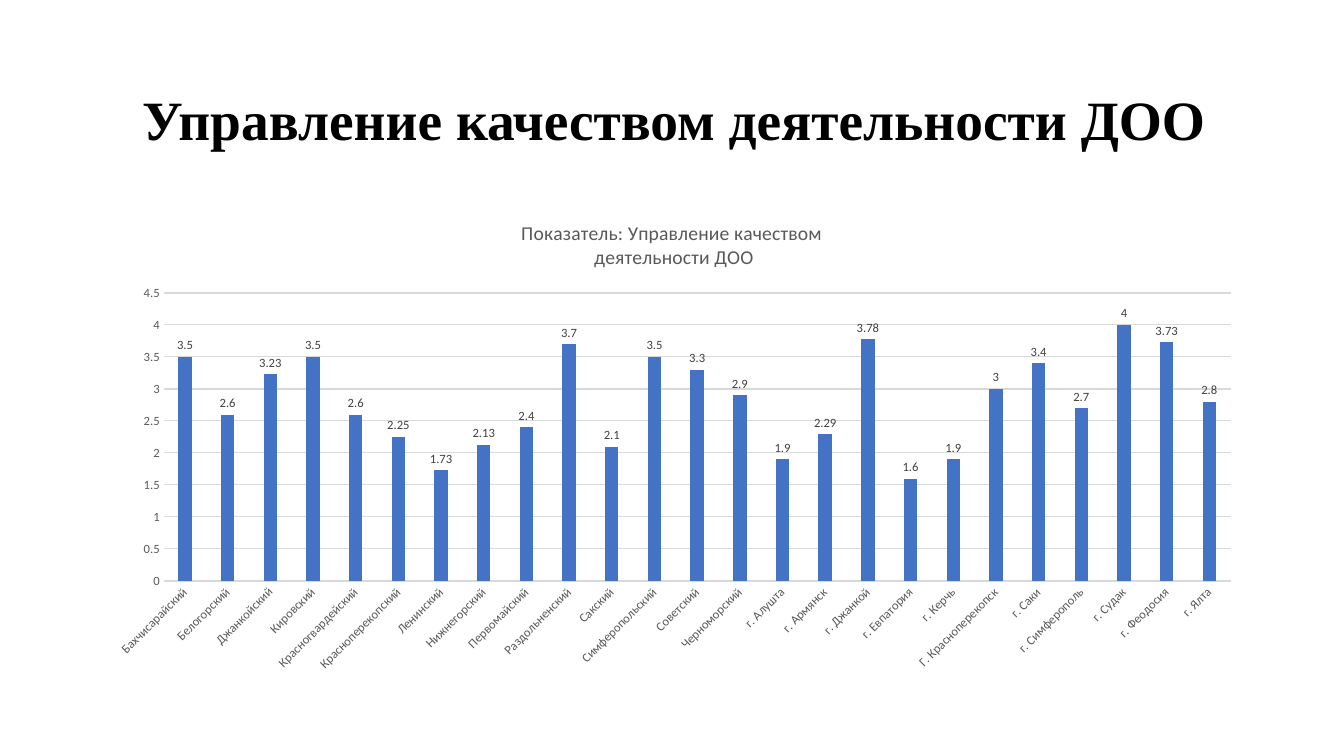
from lxml.etree import SubElement
from pptx import Presentation
from pptx.chart.data import CategoryChartData
from pptx.dml.color import RGBColor
from pptx.enum.chart import XL_CHART_TYPE as ChartType, XL_LABEL_POSITION as LabelPos, XL_TICK_MARK as Tick
from pptx.enum.text import MSO_ANCHOR as Anchor, PP_ALIGN as Align
from pptx.oxml.ns import qn
from pptx.util import Inches, Pt

SLIDE_W, SLIDE_H = Inches(13.33), Inches(7.5)
COLORS = {"heading": "000000", "muted": "595959", "value": "404040",
          "grid": "D9D9D9", "bar": "4472C4"}
HEADING = "Управление качеством деятельности ДОО"
CHART_TITLE = ["Показатель: Управление качеством ", "деятельности ДОО"]
SCORES = {
    "Бахчисарайский": 3.5, "Белогорский": 2.6, "Джанкойский": 3.23,
    "Кировский": 3.5, "Красногвардейский": 2.6, "Красноперекопский": 2.25,
    "Ленинский": 1.73, "Нижнегорский": 2.13, "Первомайский": 2.4,
    "Раздольненский": 3.7, "Сакский": 2.1, "Симферопольский": 3.5,
    "Советский": 3.3, "Черноморский": 2.9, "г. Алушта": 1.9,
    "г. Армянск": 2.29, "г. Джанкой": 3.78, "г. Евпатория": 1.6,
    "г. Керчь": 1.9, "Г. Красноперекопск": 3, "г. Саки": 3.4,
    "г. Симферополь": 2.7, "г. Судак": 4, "г. Феодосия": 3.73, "г. Ялта": 2.8,
}


def color(name):
    """Return the palette colour with this name."""
    return RGBColor.from_string(COLORS[name])


def area(left, top, width, height):
    """Turn shares of the slide into a position and a size."""
    return (int(left * SLIDE_W), int(top * SLIDE_H),
            int(width * SLIDE_W), int(height * SLIDE_H))


def style_font(font, size, tint, face="Calibri", bold=False):
    """Set the size, colour, face and weight of a font."""
    font.size, font.name, font.bold = Pt(size), face, bold
    font.color.rgb = color(tint)


def write(frame, lines, spacing=None, **style):
    """Fill a text frame with centred lines in one style."""
    for number, line in enumerate(lines):
        paragraph = frame.add_paragraph() if number else frame.paragraphs[0]
        paragraph.alignment = Align.CENTER
        if spacing:
            paragraph.line_spacing = spacing
        run = paragraph.add_run()
        run.text = line
        style_font(run.font, **style)


def style_line(line):
    """Draw a thin line in the grid colour."""
    line.color.rgb = color("grid")
    line.width = Pt(0.75)


def style_axis(axis):
    """Remove the tick marks of an axis and set its label font."""
    axis.major_tick_mark = axis.minor_tick_mark = Tick.NONE
    style_font(axis.tick_labels.font, 9, "muted")


def place_plot(chart, **shares):
    """Fix the inner plot area as shares of the chart."""
    plot_area = chart._chartSpace.chart.plotArea
    for old in plot_area.findall(qn("c:layout")):
        plot_area.remove(old)
    layout = SubElement(plot_area, qn("c:layout"))
    plot_area.insert(0, layout)
    manual = SubElement(layout, qn("c:manualLayout"))
    settings = {"layoutTarget": "inner", "xMode": "edge", "yMode": "edge", **shares}
    for tag, value in settings.items():
        SubElement(manual, qn(f"c:{tag}")).set("val", str(value))


def add_heading(slide):
    """Add the slide heading."""
    frame = slide.shapes.add_textbox(*area(0.07, 0.053, 0.863, 0.193)).text_frame
    frame.word_wrap = True
    frame.vertical_anchor = Anchor.MIDDLE
    write(frame, [HEADING], spacing=1.15, size=39.6, tint="heading",
          face="Times New Roman", bold=True)


def add_score_chart(slide):
    """Add the column chart of scores by district and town."""
    scores = CategoryChartData()
    scores.categories = list(SCORES)
    scores.add_series("Series 1", list(SCORES.values()))
    chart = slide.shapes.add_chart(ChartType.COLUMN_CLUSTERED,
                                   *area(0.07, 0.267, 0.863, 0.635), scores).chart
    style_font(chart.font, 10, "heading")
    chart.has_legend = False
    write(chart.chart_title.text_frame, CHART_TITLE, size=14, tint="muted")
    place_plot(chart, x=0.06, y=0.19, w=0.92, h=0.6)

    districts, scale = chart.category_axis, chart.value_axis
    style_axis(districts)
    style_line(districts.format.line)
    districts._element.find(qn("c:txPr")).find(qn("a:bodyPr")).set("rot", "-2700000")
    style_axis(scale)
    scale.format.line.fill.background()
    scale.minimum_scale, scale.maximum_scale, scale.major_unit = 0, 4.5, 0.5
    style_line(scale.major_gridlines.format.line)

    plot = chart.plots[0]
    plot.gap_width, plot.overlap, plot.vary_by_categories = 219, -27, False
    columns = plot.series[0]
    columns.format.fill.solid()
    columns.format.fill.fore_color.rgb = color("bar")
    labels = columns.data_labels
    labels.show_value = True
    labels.position = LabelPos.OUTSIDE_END
    style_font(labels.font, 9, "value")


def main():
    """Build the slide and save it."""
    deck = Presentation()
    deck.slide_width, deck.slide_height = SLIDE_W, SLIDE_H
    slide = deck.slides.add_slide(deck.slide_layouts[6])
    add_heading(slide)
    add_score_chart(slide)
    deck.save("out.pptx")


if __name__ == "__main__":
    main()
